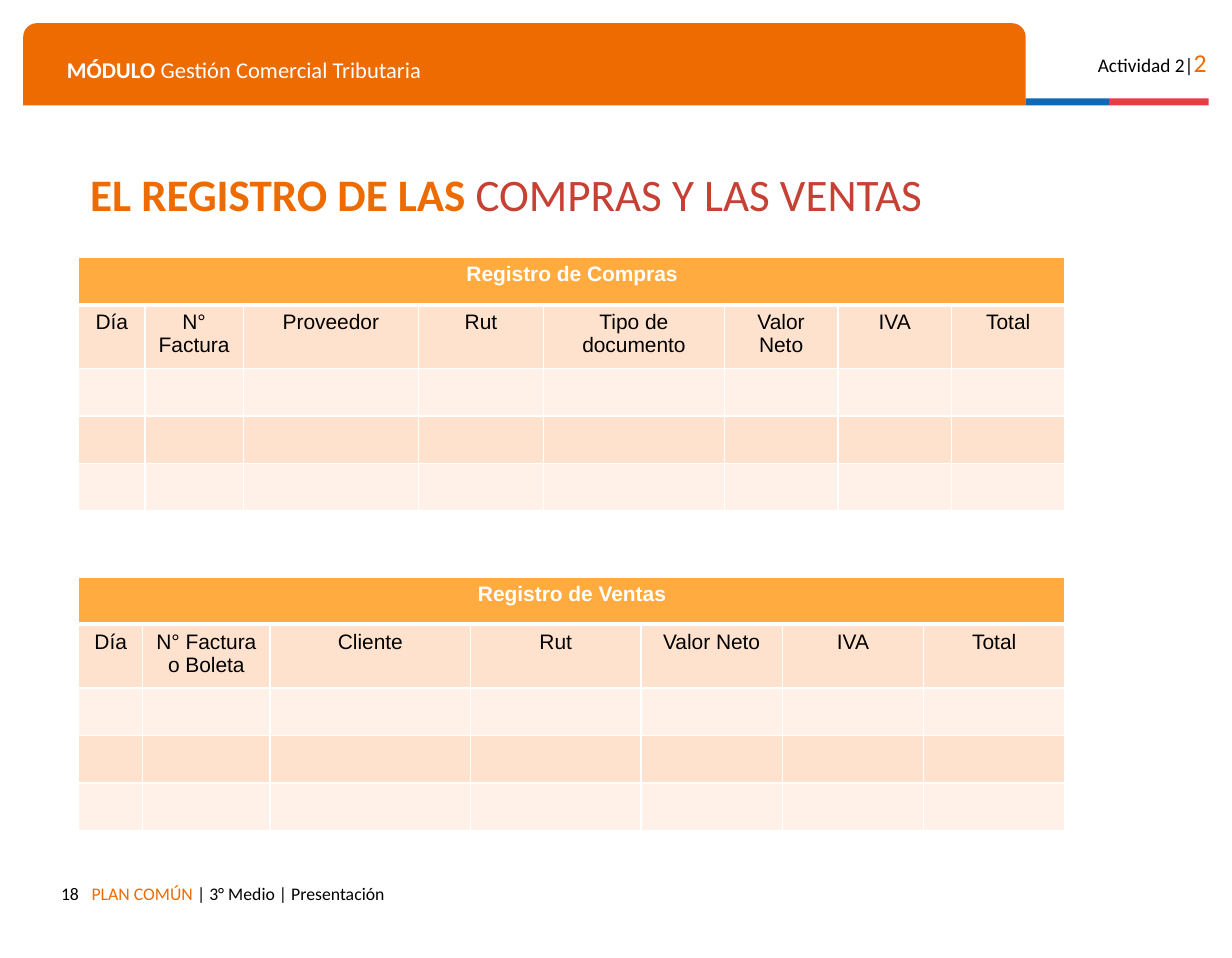
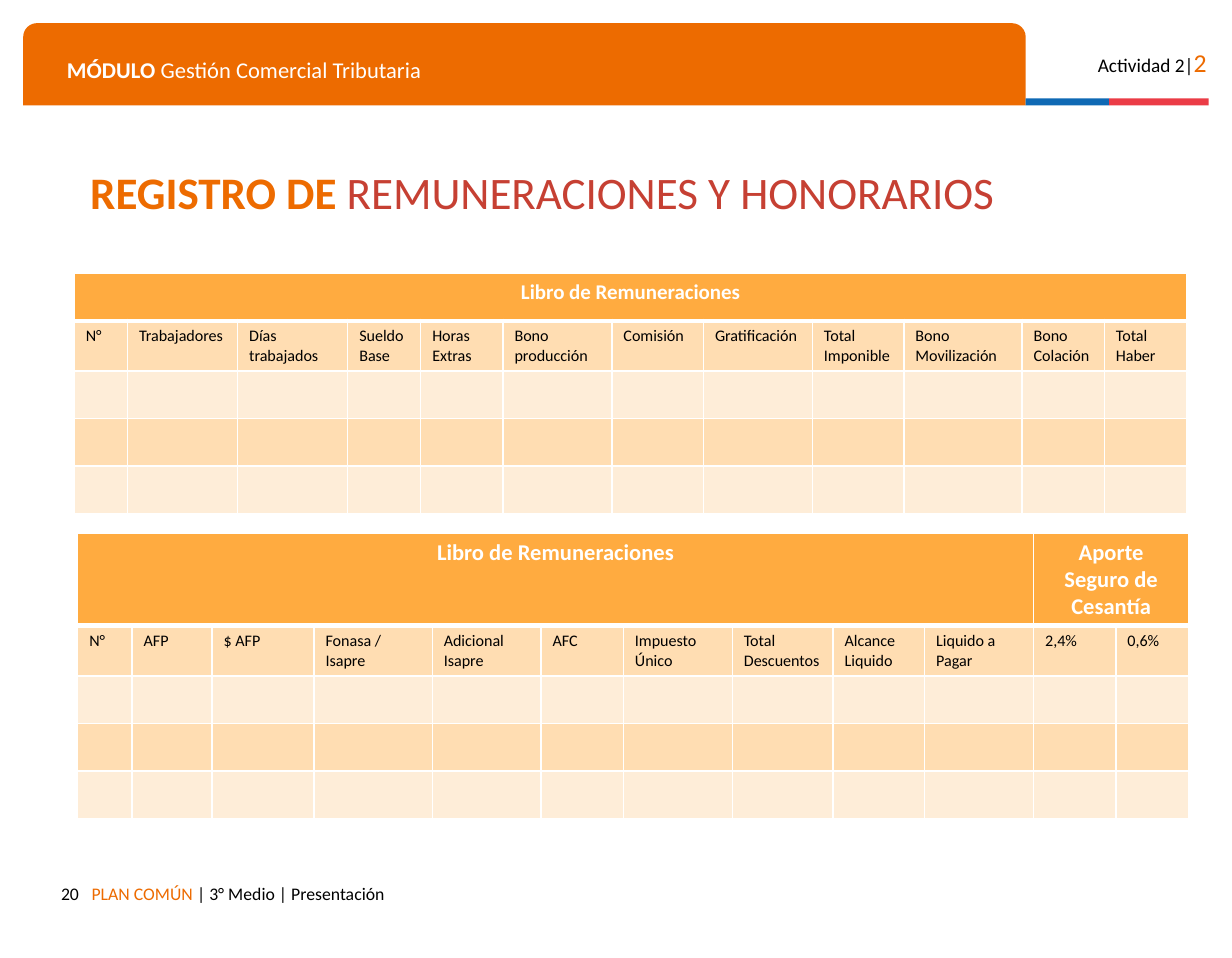
from lxml.etree import SubElement
from pptx import Presentation
from pptx.dml.color import RGBColor
from pptx.enum.shapes import MSO_SHAPE
from pptx.enum.text import MSO_ANCHOR, PP_ALIGN
from pptx.oxml.ns import qn
from pptx.util import Pt

PX = 9144  # 100 px to the inch
WIDE, HIGH = 1063, 827

WHITE = RGBColor(0xFF, 0xFF, 0xFF)
BLACK = RGBColor(0x00, 0x00, 0x00)
ORANGE = RGBColor(0xED, 0x6B, 0x00)
BLUE = RGBColor(0x0F, 0x69, 0xB4)
RED = RGBColor(0xEB, 0x3C, 0x46)
BRICK = RGBColor(0xC6, 0x40, 0x33)
AMBER = RGBColor(0xFF, 0xAB, 0x40)
PEACH = (RGBColor(0xFF, 0xE2, 0xCD), RGBColor(0xFF, 0xF1, 0xE8))
SAND = (RGBColor(0xFF, 0xDD, 0xB2), RGBColor(0xFE, 0xED, 0xD8))

LEFT, MID, RIGHT = PP_ALIGN.LEFT, PP_ALIGN.CENTER, PP_ALIGN.RIGHT

# Table looks: font, head size, label size, label alignment, row bands
SALES = dict(font="Arial", head=13, label=13, align=MID, bands=PEACH)
PAY = dict(font="Calibri", head=13, label=10, align=LEFT, bands=SAND)

# Slides: heads are (text, columns spanned), cols are (label, width)
SLIDES = [
    dict(
        num="18", title=("EL REGISTRO DE LAS ", "COMPRAS Y LAS VENTAS"), top=154,
        tables=[
            dict(at=(68, 222), look=SALES, rows=(41, 55, 41, 41, 41),
                 heads=[("Registro de Compras", 8)],
                 cols=[("Día", 57), ("N° Factura", 85), ("Proveedor", 151),
                       ("Rut", 108), ("Tipo de documento", 156),
                       ("Valor Neto", 98), ("IVA", 98), ("Total", 98)]),
            dict(at=(68, 498), look=SALES, rows=(41, 55, 41, 41, 41),
                 heads=[("Registro de Ventas", 7)],
                 cols=[("Día", 55), ("N° Factura o Boleta", 110),
                       ("Cliente", 173), ("Rut", 147), ("Valor Neto", 122),
                       ("IVA", 122), ("Total", 122)]),
        ]),
    dict(
        num="20", title=("REGISTRO DE ", "REMUNERACIONES Y HONORARIOS"), top=152,
        tables=[
            dict(at=(64, 236), look=PAY, rows=(41, 41, 41, 41, 41),
                 heads=[("Libro de Remuneraciones", 12)],
                 cols=[("N°", 46), ("Trabajadores", 95),
                       ("Días trabajados", 95), ("Sueldo Base", 63),
                       ("Horas Extras", 71), ("Bono producción", 94),
                       ("Comisión", 79), ("Gratificación", 94),
                       ("Total Imponible", 79), ("Bono Movilización", 102),
                       ("Bono Colación", 71), ("Total Haber", 71)]),
            dict(at=(67, 460), look=dict(PAY, head=14),
                 rows=(80, 43, 41, 41, 41),
                 heads=[("Libro de Remuneraciones", 10),
                        ("Aporte Seguro de Cesantía", 2)],
                 cols=[("N°", 47), ("AFP", 69), ("$ AFP", 88),
                       ("Fonasa / Isapre", 102), ("Adicional Isapre", 94),
                       ("AFC", 71), ("Impuesto Único", 94),
                       ("Total Descuentos", 87), ("Alcance Liquido", 79),
                       ("Liquido a Pagar", 94), ("2,4%", 71), ("0,6%", 63)]),
        ]),
]

# Bands at the top of every slide
BANDS = [
    (MSO_SHAPE.ROUND_2_SAME_RECTANGLE, (20, 20, 865, 71), ORANGE),
    (MSO_SHAPE.RECTANGLE, (885, 85, 72, 6), BLUE),
    (MSO_SHAPE.RECTANGLE, (957, 85, 86, 6), RED),
]


def scale(box):
    return [n * PX for n in box]


def write(frame, runs, size, align=LEFT, font="Calibri"):
    """Fill the first paragraph; runs are (text, colour, bold)."""
    para = frame.paragraphs[0]
    para.alignment = align
    para.font.name = font
    para.font.size = Pt(size)
    for text, color, bold in runs:
        run = para.add_run()
        run.text = text
        run.font.color.rgb = color
        run.font.bold = bold
    return para


def label(slide, box, runs, size, align=LEFT, inset=10):
    frame = slide.shapes.add_textbox(*scale(box)).text_frame
    frame.word_wrap = True
    frame.margin_left = inset * PX
    frame.margin_right = frame.margin_top = frame.margin_bottom = 10 * PX
    write(frame, runs, size, align)
    return frame


def paint(cell, color, row):
    """White borders, thick under the head row, then the fill."""
    props = cell._tc.get_or_add_tcPr()
    thick = {0: "lnB", 1: "lnT"}.get(row)
    for side in ("lnL", "lnR", "lnT", "lnB"):
        line = SubElement(props, qn("a:" + side),
                          w=str(Pt(3 if side == thick else 1)))
        fill = SubElement(line, qn("a:solidFill"))
        SubElement(fill, qn("a:srgbClr"), val=str(WHITE))
    cell.fill.solid()
    cell.fill.fore_color.rgb = color


def ledger(slide, at, look, rows, heads, cols):
    box = (*at, sum(w for _, w in cols), sum(rows))
    table = slide.shapes.add_table(len(rows), len(cols), *scale(box)).table
    table.first_row = table.horz_banding = False
    for c, (_, width) in enumerate(cols):
        table.columns[c].width = width * PX
    for r, height in enumerate(rows):
        table.rows[r].height = height * PX
        for c in range(len(cols)):
            color = look["bands"][(r - 1) % 2] if r else AMBER
            paint(table.cell(r, c), color, r)
    # Head cells
    col = 0
    for text, span in heads:
        cell = table.cell(0, col)
        cell.merge(table.cell(0, col + span - 1))
        write(cell.text_frame, [(text, WHITE, True)], look["head"], MID,
              look["font"])
        col += span
    # Column labels
    for c, (text, _) in enumerate(cols):
        write(table.cell(1, c).text_frame, [(text, BLACK, False)],
              look["label"], look["align"], look["font"])


def base(slide, num):
    """Bands, module name, activity and footer."""
    for kind, box, color in BANDS:
        band = slide.shapes.add_shape(kind, *scale(box))
        band.shadow.inherit = False
        band.fill.solid()
        band.fill.fore_color.rgb = color
        band.line.fill.background()
    label(slide, (48, 38, 814, 35),
          [("MÓDULO", WHITE, True),
           (" Gestión Comercial Tributaria", WHITE, False)], 14)
    task = label(slide, (923, 30, 128, 38),
                 [("Actividad 2|", BLACK, False), ("2", ORANGE, False)],
                 12, RIGHT)
    task.paragraphs[0].runs[1].font.size = Pt(16)
    label(slide, (20, 753, 58, 29), [(num, BLACK, False)], 11, RIGHT)
    label(slide, (41, 753, 742, 38),
          [("PLAN COMÚN ", ORANGE, False),
           ("| 3° Medio | Presentación", BLACK, False)], 11, inset=38)


def main():
    deck = Presentation()
    deck.slide_width, deck.slide_height = scale((WIDE, HIGH))
    for page in SLIDES:
        slide = deck.slides.add_slide(deck.slide_layouts[6])
        base(slide, page["num"])
        strong, plain = page["title"]
        title = label(slide, (68, page["top"], 979, 35),
                      [(strong, ORANGE, True), (plain, BRICK, False)], 28)
        title.vertical_anchor = MSO_ANCHOR.MIDDLE
        title.paragraphs[0].line_spacing = 0.8
        for table in page["tables"]:
            ledger(slide, **table)
    deck.save("out.pptx")


if __name__ == "__main__":
    main()
